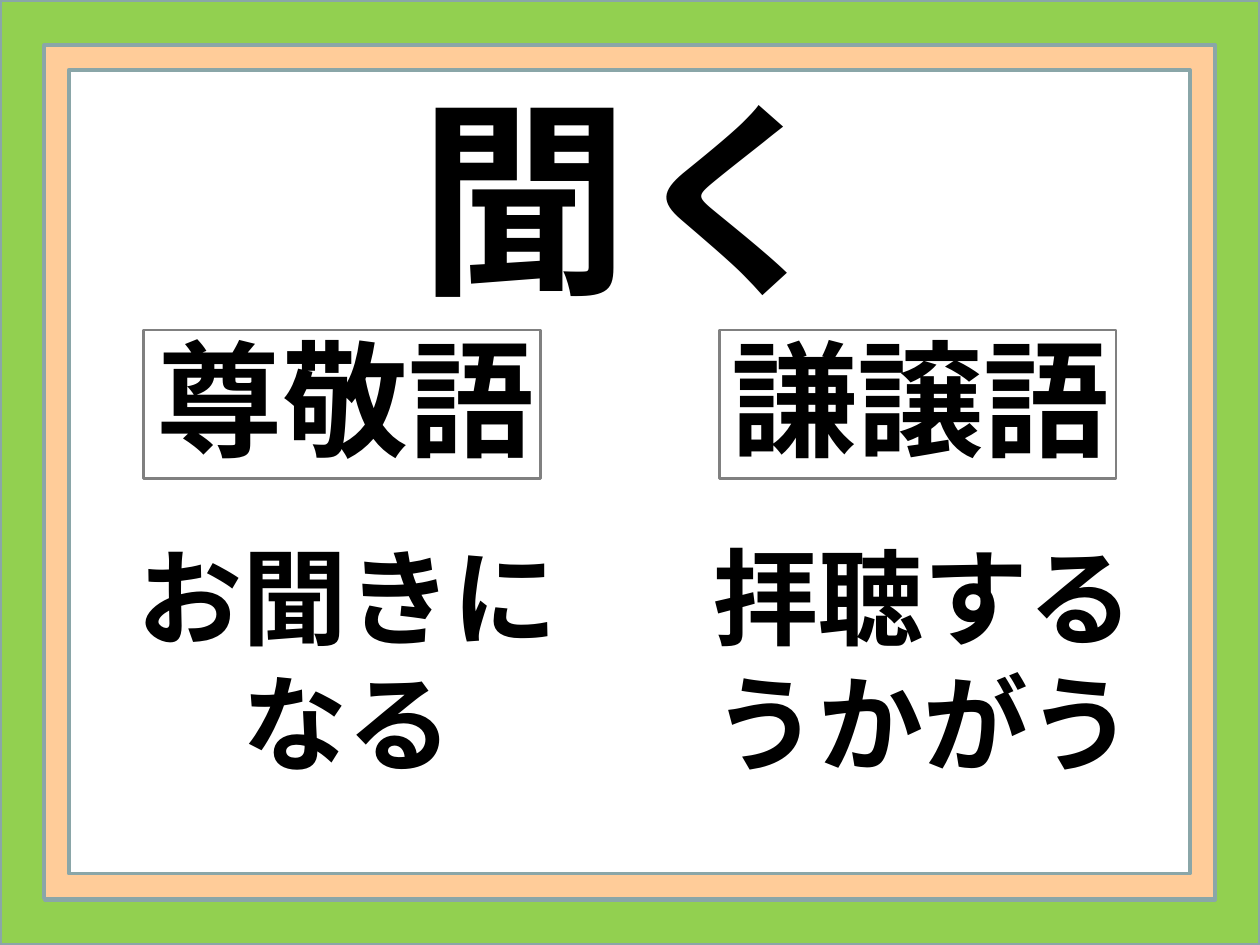
from dataclasses import dataclass

from lxml.etree import SubElement
from pptx import Presentation
from pptx.dml.color import RGBColor
from pptx.enum.lang import MSO_LANGUAGE_ID
from pptx.enum.shapes import MSO_SHAPE
from pptx.enum.text import MSO_ANCHOR, MSO_AUTO_SIZE, PP_ALIGN
from pptx.oxml.ns import qn
from pptx.util import Cm, Pt


@dataclass(frozen=True)
class Theme:
    font: str = "Noto Sans CJK JP"
    ink: str = "000000"
    outer: str = "92D050"
    inner: str = "FFCC99"
    frame_line: str = "8AA6A8"
    label_line: str = "808080"
    verb_size: int = 120
    label_size: int = 72
    answer_size: int = 60


THEME = Theme()
COLUMNS = (  # label left, answer left, label, answer lines
    (2.9, 1.5, "尊敬語", ["お聞きになる"]),
    (14.5, 13.11, "謙譲語", ["拝聴する", "うかがう"]),
)


def add_outlined(slide, preset, box, line_color, line_width, fill_color=None):
    """Add a preset shape with a plain outline and an optional fill."""
    outlined = slide.shapes.add_shape(preset, *map(Cm, box))
    outlined.shadow.inherit = False
    outlined.line.color.rgb = RGBColor.from_string(line_color)
    outlined.line.width = Pt(line_width)
    if fill_color:
        outlined.fill.solid()
        outlined.fill.fore_color.rgb = RGBColor.from_string(fill_color)
    else:
        outlined.fill.background()
    return outlined


def add_frame(slide, box, thickness, fill_color):
    border = add_outlined(slide, MSO_SHAPE.FRAME, box, THEME.frame_line, 2, fill_color)
    border.adjustments[0] = thickness


def write_lines(frame, lines, size, align, frame_format):
    """Fill a text frame with one bold paragraph per line."""
    for key, value in {"word_wrap": False, **frame_format}.items():
        setattr(frame, key, value)
    font_format = {"name": THEME.font, "size": Pt(size), "bold": True,
                   "language_id": MSO_LANGUAGE_ID.JAPANESE}
    for index, line in enumerate(lines):
        paragraph = frame.add_paragraph() if index else frame.paragraphs[0]
        paragraph.alignment = align
        run = paragraph.add_run()
        run.text = line
        for key, value in font_format.items():
            setattr(run.font, key, value)
        run.font.color.rgb = RGBColor.from_string(THEME.ink)
        # Japanese glyphs take the East Asian typeface
        SubElement(run.font._element, qn("a:ea"), typeface=THEME.font)


def add_centred_text(slide, box, lines, size):
    words = slide.shapes.add_textbox(*map(Cm, box))
    write_lines(words.text_frame, lines, size, PP_ALIGN.CENTER,
                {"vertical_anchor": MSO_ANCHOR.MIDDLE,
                 "auto_size": MSO_AUTO_SIZE.SHAPE_TO_FIT_TEXT})


def add_label(slide, box, label):
    tag = add_outlined(slide, MSO_SHAPE.RECTANGLE, box, THEME.label_line, 1.5)
    write_lines(tag.text_frame, [label], THEME.label_size, PP_ALIGN.LEFT,
                {"vertical_anchor": MSO_ANCHOR.BOTTOM})


def main():
    deck = Presentation()
    deck.slide_width, deck.slide_height = Cm(25.4), Cm(19.05)
    slide = deck.slides.add_slide(deck.slide_layouts[6])

    # Double border
    add_frame(slide, (0, 0, 25.4, 19.05), 0.047, THEME.outer)
    add_frame(slide, (0.89, 0.91, 23.6, 17.2), 0.029, THEME.inner)

    # Plain verb
    add_centred_text(slide, (3, 1.52, 19.4, 4.8), ["聞く"], THEME.verb_size)

    # Honorific and humble forms
    for label_left, answer_left, label, answers in COLUMNS:
        add_centred_text(slide, (answer_left, 9.78, 11, 7), answers, THEME.answer_size)
        add_label(slide, (label_left, 6.65, 8, 3), label)

    deck.save("out.pptx")


if __name__ == "__main__":
    main()
